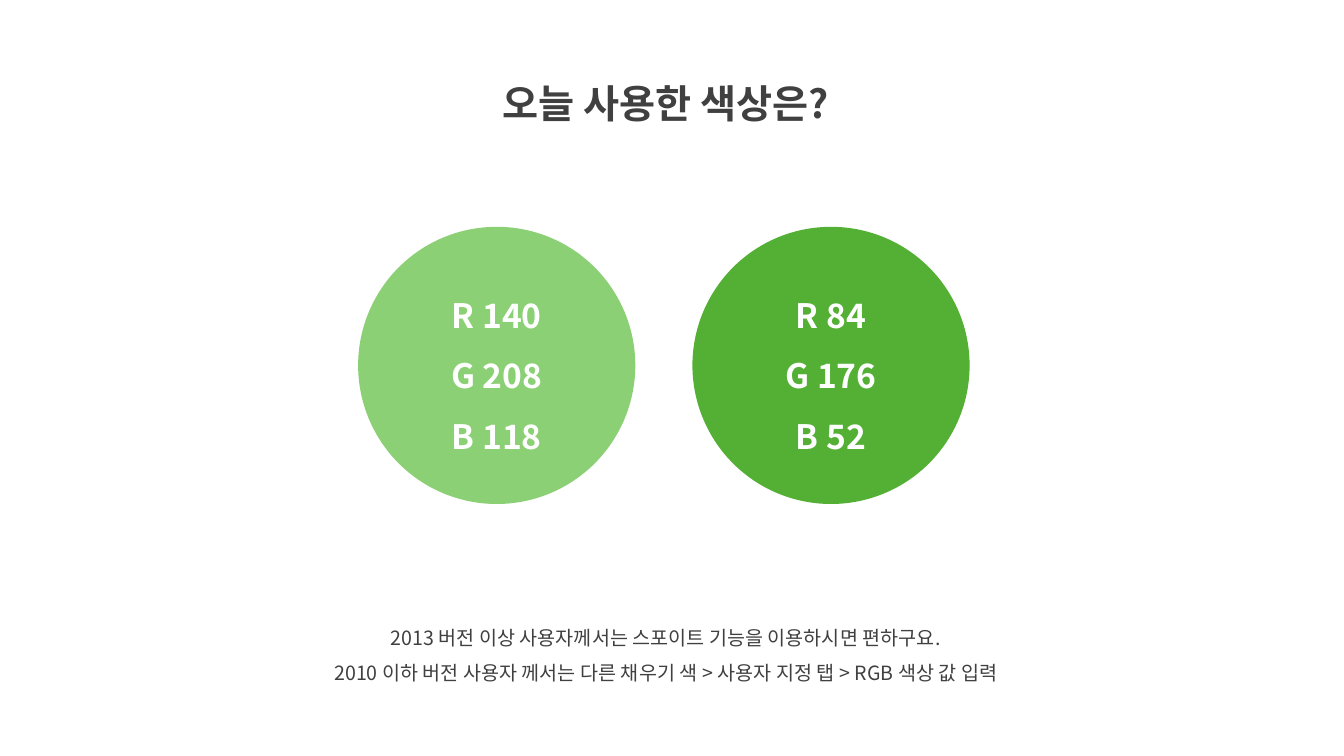
import pptx
import pptx.util
import pptx.dml.color
import pptx.enum.shapes
import pptx.enum.text
import pptx.oxml
import pptx.oxml.ns

Pt = pptx.util.Pt
RGBColor = pptx.dml.color.RGBColor
ANCHOR = pptx.enum.text.MSO_ANCHOR
AUTO_SIZE = pptx.enum.text.MSO_AUTO_SIZE

DARK_GREY = RGBColor(0x40, 0x40, 0x40)
WHITE = RGBColor(0xFF, 0xFF, 0xFF)
LIGHT_GREEN = RGBColor(140, 208, 118)
GREEN = RGBColor(84, 176, 52)
FONT = "Noto Sans CJK KR"

TITLE_FORMAT = {"size": Pt(28), "bold": True, "name": FONT}
NOTE_FORMAT = {"size": Pt(14), "bold": False, "name": FONT}
SWATCH_FORMAT = {"size": Pt(24), "bold": True, "name": FONT}


def write_lines(frame, lines, font_format, color):
    """Fill a text frame with centred lines, one paragraph each."""
    for index, line in enumerate(lines):
        paragraph = frame.paragraphs[0] if index == 0 else frame.add_paragraph()
        paragraph.alignment = pptx.enum.text.PP_ALIGN.CENTER
        paragraph.line_spacing = 1.5
        run = paragraph.add_run()
        run.text = line
        for attribute, value in font_format.items():
            setattr(run.font, attribute, value)
        run.font.color.rgb = color
        # Hangul takes the East Asian typeface
        latin = run.font._element.find(pptx.oxml.ns.qn("a:latin"))
        east_asian = pptx.oxml.parse_xml(
            f'<a:ea {pptx.oxml.ns.nsdecls("a")} typeface="{FONT}"/>')
        latin.addnext(east_asian)


def add_caption(slide, box, lines, font_format):
    """Place a centred text block in the box."""
    caption = slide.shapes.add_textbox(*map(Pt, box))
    frame = caption.text_frame
    frame.word_wrap = True
    frame.auto_size = AUTO_SIZE.SHAPE_TO_FIT_TEXT
    write_lines(frame, lines, font_format, DARK_GREY)


def add_swatches(slide, box, colors):
    """Spread one labelled circle per colour across the box."""
    left, top, width, diameter = box
    step = (width - diameter) / (len(colors) - 1)
    for index, color in enumerate(colors):
        swatch = slide.shapes.add_shape(
            pptx.enum.shapes.MSO_SHAPE.OVAL,
            Pt(left + index * step), Pt(top), Pt(diameter), Pt(diameter))
        swatch.shadow.inherit = False
        swatch.fill.solid()
        swatch.fill.fore_color.rgb = color
        swatch.line.fill.background()
        swatch.text_frame.vertical_anchor = ANCHOR.MIDDLE
        labels = [f"{channel} {value}" for channel, value in zip("RGB", color)]
        write_lines(swatch.text_frame, labels, SWATCH_FORMAT, WHITE)


def main():
    presentation = pptx.Presentation()
    presentation.slide_width = Pt(960)
    presentation.slide_height = Pt(540)
    slide = presentation.slides.add_slide(presentation.slide_layouts[6])

    # Title
    add_caption(slide, (308.9, 36, 333.4, 51.8), ["오늘 사용한 색상은?"], TITLE_FORMAT)

    # Colour circles
    add_swatches(slide, (255.8, 162, 436.8, 198), [LIGHT_GREEN, GREEN])

    # Usage note
    add_caption(slide, (187.9, 434.9, 575.3, 58.3), [
        "2013 버전 이상 사용자께서는 스포이트 기능을 이용하시면 편하구요.",
        "2010 이하 버전 사용자 께서는 다른 채우기 색 > 사용자 지정 탭 > RGB 색상 값 입력",
    ], NOTE_FORMAT)

    presentation.save("out.pptx")


if __name__ == "__main__":
    main()
